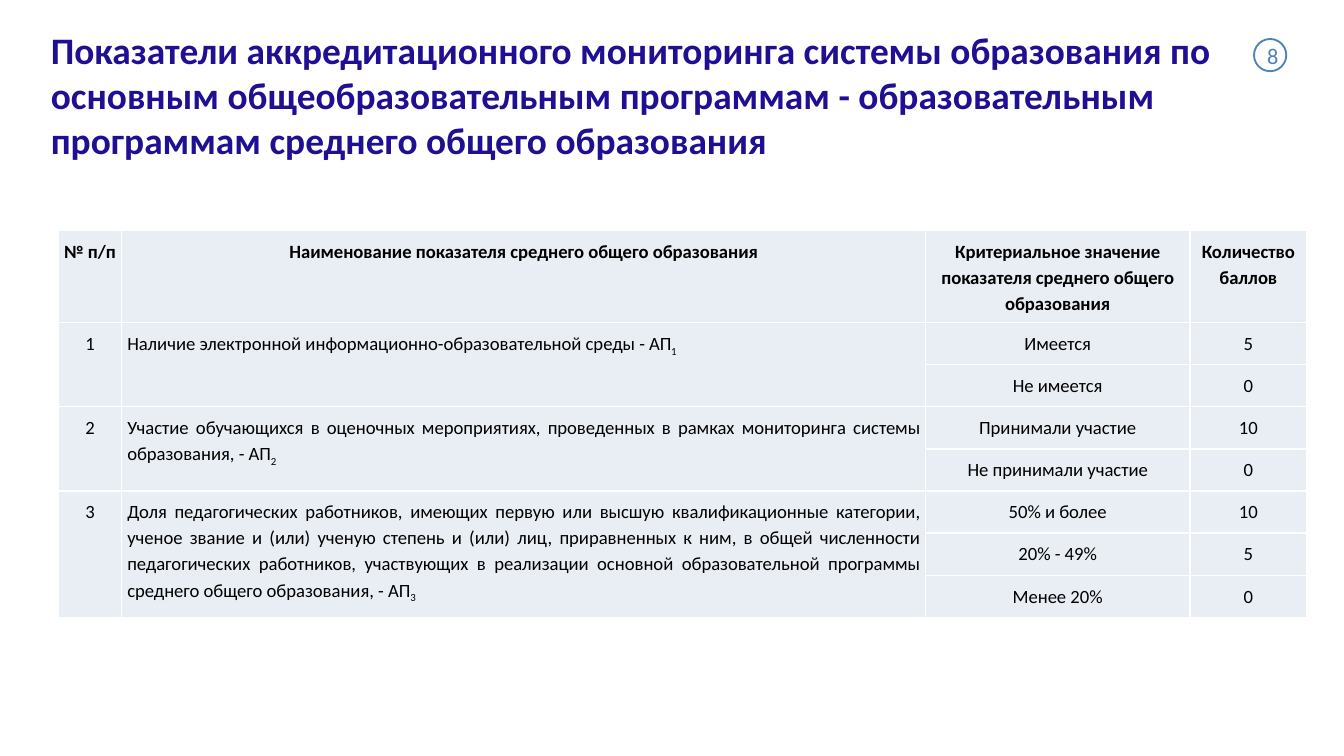
"""Build the slide with accreditation monitoring indicators for secondary education."""
from lxml.etree import SubElement
from pptx import Presentation
from pptx.dml.color import RGBColor
from pptx.enum.shapes import MSO_SHAPE
from pptx.enum.text import MSO_ANCHOR, MSO_AUTO_SIZE, PP_ALIGN
from pptx.oxml.ns import qn
from pptx.util import Pt

NAVY = RGBColor(0x1F, 0x0F, 0x93)
BLUE = RGBColor(0x4F, 0x81, 0xBD)
PALE = RGBColor(0xE9, 0xED, 0xF4)
WHITE = RGBColor(0xFF, 0xFF, 0xFF)
BLACK = RGBColor(0x00, 0x00, 0x00)

TITLE = (
    "Показатели аккредитационного мониторинга системы образования по "
    "основным общеобразовательным программам - образовательным "
    "программам среднего общего образования"
)
HEADERS = [
    "№ п/п",
    "Наименование показателя среднего общего образования",
    "Критериальное значение показателя среднего общего образования",
    "Количество баллов",
]
INDICATORS = [
    (
        "Наличие электронной информационно-образовательной среды - АП",
        [("Имеется", 5), ("Не имеется", 0)],
    ),
    (
        "Участие обучающихся в оценочных мероприятиях, проведенных в рамках "
        "мониторинга системы образования, - АП",
        [("Принимали участие", 10), ("Не принимали участие", 0)],
    ),
    (
        "Доля педагогических работников, имеющих первую или высшую "
        "квалификационные категории, ученое звание и (или) ученую степень и (или) "
        "лиц, приравненных к ним, в общей численности педагогических работников, "
        "участвующих в реализации основной образовательной программы среднего "
        "общего образования, - АП",
        [("50% и более", 10), ("20% - 49%", 5), ("Менее 20%", 0)],
    ),
]
COLUMN_WIDTHS = [34, 430.5, 141.8, 62.5]
HEADER_HEIGHT = 49.2
ROW_HEIGHT = 22.6


def set_font(paragraph, size, color, bold=False):
    font = paragraph.font
    font.name = "Calibri"
    font.size = Pt(size)
    font.bold = bold
    font.color.rgb = color


def write_cell(cell, text, bold=False, align=PP_ALIGN.CENTER):
    cell.text = text
    paragraph = cell.text_frame.paragraphs[0]
    paragraph.alignment = align
    paragraph.line_spacing = 1.15
    set_font(paragraph, 10, BLACK, bold)
    return paragraph


deck = Presentation()
deck.slide_width = Pt(720)
deck.slide_height = Pt(405)
page = deck.slides.add_slide(deck.slide_layouts[5])

title = page.shapes.title
title.left, title.top, title.width, title.height = Pt(20), Pt(38), Pt(648), Pt(25.5)
title.text = TITLE
title.text_frame.word_wrap = True
title.text_frame.auto_size = MSO_AUTO_SIZE.NONE
title.text_frame.vertical_anchor = MSO_ANCHOR.MIDDLE
title.text_frame.paragraphs[0].alignment = PP_ALIGN.LEFT
set_font(title.text_frame.paragraphs[0], 20, NAVY, True)

row_count = 1 + sum(len(criteria) for name, criteria in INDICATORS)
table = page.shapes.add_table(
    row_count, len(HEADERS), Pt(31.2), Pt(123.5),
    Pt(sum(COLUMN_WIDTHS)), Pt(HEADER_HEIGHT + ROW_HEIGHT * (row_count - 1)),
).table
table.horz_banding = False
for column, width in zip(table.columns, COLUMN_WIDTHS):
    column.width = Pt(width)
for row in table.rows:
    row.height = Pt(ROW_HEIGHT)
table.rows[0].height = Pt(HEADER_HEIGHT)

for cell in table.iter_cells():
    cell.margin_left = cell.margin_right = Pt(3)
    cell.margin_top = cell.margin_bottom = Pt(3.6)
    cell.vertical_anchor = MSO_ANCHOR.TOP
    properties = cell._tc.get_or_add_tcPr()
    for side in ("a:lnL", "a:lnR", "a:lnT", "a:lnB"):
        border = SubElement(properties, qn(side), w=str(Pt(1)))
        border_fill = SubElement(border, qn("a:solidFill"))
        SubElement(border_fill, qn("a:srgbClr"), val=str(WHITE))
    cell.fill.solid()
    cell.fill.fore_color.rgb = PALE

for index, header in enumerate(HEADERS):
    write_cell(table.cell(0, index), header, bold=True)

first = 1
for number, (name, criteria) in enumerate(INDICATORS, start=1):
    last = first + len(criteria) - 1
    for index in (0, 1):
        table.cell(first, index).merge(table.cell(last, index))
    write_cell(table.cell(first, 0), str(number))
    paragraph = write_cell(table.cell(first, 1), name, align=PP_ALIGN.JUSTIFY)
    subscript = paragraph.add_run()
    subscript.text = str(number)
    subscript.font._element.set("baseline", "-25000")
    for offset, (criterion, points) in enumerate(criteria):
        write_cell(table.cell(first + offset, 2), criterion)
        write_cell(table.cell(first + offset, 3), str(points))
    first = last + 1

badge = page.shapes.add_shape(MSO_SHAPE.OVAL, Pt(671.8), Pt(20.9), Pt(17.3), Pt(17.3))
badge.shadow.inherit = False
badge.fill.solid()
badge.fill.fore_color.rgb = WHITE
badge.line.color.rgb = BLUE
badge.line.width = Pt(1)
frame = badge.text_frame
frame.margin_left = Pt(3)
frame.margin_right = frame.margin_top = frame.margin_bottom = 0
frame.word_wrap = False
frame.vertical_anchor = MSO_ANCHOR.MIDDLE
frame.text = "8"
frame.paragraphs[0].alignment = PP_ALIGN.CENTER
set_font(frame.paragraphs[0], 12, BLUE)

deck.save("out.pptx")
